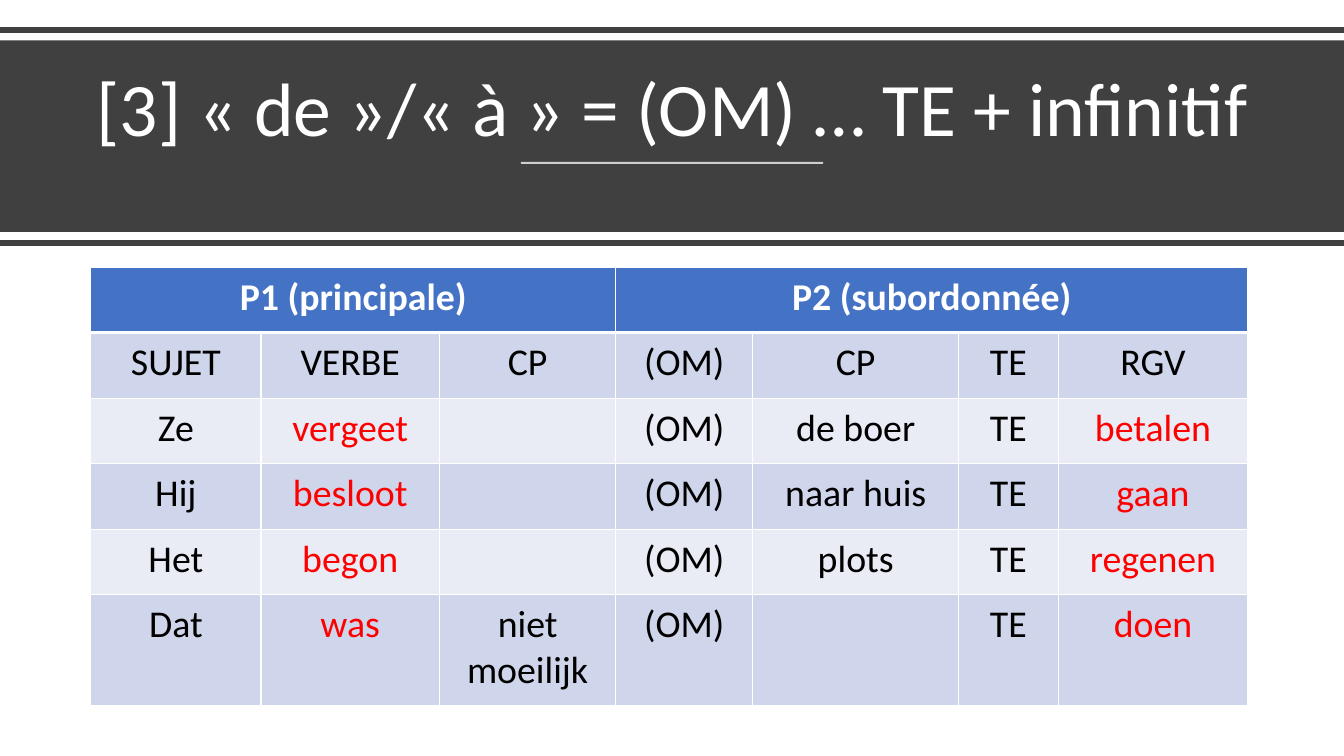
from lxml import etree
from pptx import Presentation
from pptx.dml.color import RGBColor
from pptx.enum.shapes import MSO_CONNECTOR, MSO_SHAPE
from pptx.enum.text import MSO_ANCHOR, PP_ALIGN
from pptx.oxml.ns import qn
from pptx.util import Pt

STRAIGHT = MSO_CONNECTOR.STRAIGHT
RECTANGLE = MSO_SHAPE.RECTANGLE
BOTTOM = MSO_ANCHOR.BOTTOM
CENTER = PP_ALIGN.CENTER

WHITE = RGBColor(0xFF, 0xFF, 0xFF)
BLACK = RGBColor(0x00, 0x00, 0x00)
RED = RGBColor(0xFF, 0x00, 0x00)
CHARCOAL = RGBColor(0x40, 0x40, 0x40)
HEADER_BLUE = RGBColor(0x44, 0x72, 0xC4)
DARK_BAND = RGBColor(0xCF, 0xD5, 0xEA)
LIGHT_BAND = RGBColor(0xE9, 0xEB, 0xF5)

SLIDE_WIDTH, SLIDE_HEIGHT = 960, 540
TITLE = "[3] « de »/« à » = (OM) … TE + infinitif"
CLAUSES = [("P1 (principale)", 0, 2), ("P2 (subordonnée)", 3, 6)]
SENTENCE_PARTS = ["SUJET", "VERBE", "CP", "(OM)", "CP", "TE", "RGV"]
EXAMPLES = [
    ["Ze", "vergeet", "", "(OM)", "de boer", "TE", "betalen"],
    ["Hij", "besloot", "", "(OM)", "naar huis", "TE", "gaan"],
    ["Het", "begon", "", "(OM)", "plots", "TE", "regenen"],
    ["Dat", "was", "niet moeilijk", "(OM)", "", "TE", "doen"],
]
VERB_COLUMNS = (1, 6)
COLUMN_WIDTHS = [121.68, 127.44, 126, 97.92, 146.88, 71.28, 135.36]
ROW_HEIGHTS = [46.8] * 5 + [79.2]


class GrammarSlide:
    font = "Calibri"
    title_size = 54
    cell_size = 27

    def __init__(self, presentation):
        self.slide = presentation.slides.add_slide(presentation.slide_layouts[6])
        self.shapes = self.slide.shapes

    def add_text(self, paragraph, text, size, color, bold=False):
        paragraph.alignment = CENTER
        run = paragraph.add_run()
        run.text = text
        run.font.name = self.font
        run.font.size = Pt(size)
        run.font.bold = bold
        run.font.color.rgb = color

    def band(self, top, height):
        band = self.shapes.add_shape(RECTANGLE, 0, Pt(top), Pt(SLIDE_WIDTH), Pt(height))
        band.shadow.inherit = False
        band.fill.solid()
        band.fill.fore_color.rgb = CHARCOAL
        band.line.fill.background()

    def rule(self, left, right, y, color, width, opacity=100):
        rule = self.shapes.add_connector(STRAIGHT, Pt(left), Pt(y), Pt(right), Pt(y))
        rule.line.color.rgb = color
        rule.line.width = Pt(width)
        properties = rule._element.spPr
        if opacity < 100:
            tint = properties.find(".//" + qn("a:srgbClr"))
            etree.SubElement(tint, qn("a:alpha"), val=str(opacity * 1000))
        etree.SubElement(properties, qn("a:effectLst"))

    def title(self, text, left, top, width, height):
        box = self.shapes.add_textbox(Pt(left), Pt(top), Pt(width), Pt(height))
        frame = box.text_frame
        frame.word_wrap = True
        frame.vertical_anchor = BOTTOM
        paragraph = frame.paragraphs[0]
        paragraph.line_spacing = 0.9
        self.add_text(paragraph, text, self.title_size, WHITE)

    def table(self, left, top, widths, heights):
        frame = self.shapes.add_table(len(heights), len(widths), Pt(left), Pt(top),
                                      Pt(sum(widths)), Pt(sum(heights)))
        table = frame.table
        for column, width in zip(table.columns, widths):
            column.width = Pt(width)
        for row, height in zip(table.rows, heights):
            row.height = Pt(height)
        return table

    def borders(self, cell, **widths):
        properties = cell._tc.get_or_add_tcPr()
        for side in "LRTB":
            width = Pt(widths.get(side, 1))
            line = etree.SubElement(properties, qn("a:ln" + side), w=str(width))
            fill = etree.SubElement(line, qn("a:solidFill"))
            etree.SubElement(fill, qn("a:srgbClr"), val=str(WHITE))

    def cell(self, cell, text, fill, color, bold=False, **border_widths):
        self.borders(cell, **border_widths)
        cell.fill.solid()
        cell.fill.fore_color.rgb = fill
        cell.margin_left = cell.margin_right = Pt(10.8)
        cell.margin_top = cell.margin_bottom = Pt(5.04)
        if text:
            self.add_text(cell.text_frame.paragraphs[0], text, self.cell_size, color, bold)


def fill_word_order(page, table):
    """Sets the clause headings, then the banded rows below them."""
    headings = {first: text for text, first, last in CLAUSES}
    for column in range(len(COLUMN_WIDTHS)):
        page.cell(table.cell(0, column), headings.get(column, ""), HEADER_BLUE,
                  WHITE, bold=True, B=3)
    for text, first, last in CLAUSES:
        table.cell(0, first).merge(table.cell(0, last))

    for row, words in enumerate([SENTENCE_PARTS] + EXAMPLES, start=1):
        fill = DARK_BAND if row % 2 else LIGHT_BAND
        for column, word in enumerate(words):
            is_verb = row > 1 and column in VERB_COLUMNS
            page.cell(table.cell(row, column), word, fill, RED if is_verb else BLACK,
                      T=3 if row == 1 else 1)


def main():
    presentation = Presentation()
    presentation.slide_width = Pt(SLIDE_WIDTH)
    presentation.slide_height = Pt(SLIDE_HEIGHT)
    page = GrammarSlide(presentation)

    page.rule(0, SLIDE_WIDTH, 21.6, CHARCOAL, 4)
    page.band(28.8, 136.8)
    page.title(TITLE, 41.76, 38.88, 876.96, 73.44)
    page.rule(372, 588, 116.4, WHITE, 1.5, opacity=75)
    page.rule(0, SLIDE_WIDTH, 173.5, CHARCOAL, 4)
    fill_word_order(page, page.table(64.8, 190.8, COLUMN_WIDTHS, ROW_HEIGHTS))

    presentation.save("out.pptx")


if __name__ == "__main__":
    main()
